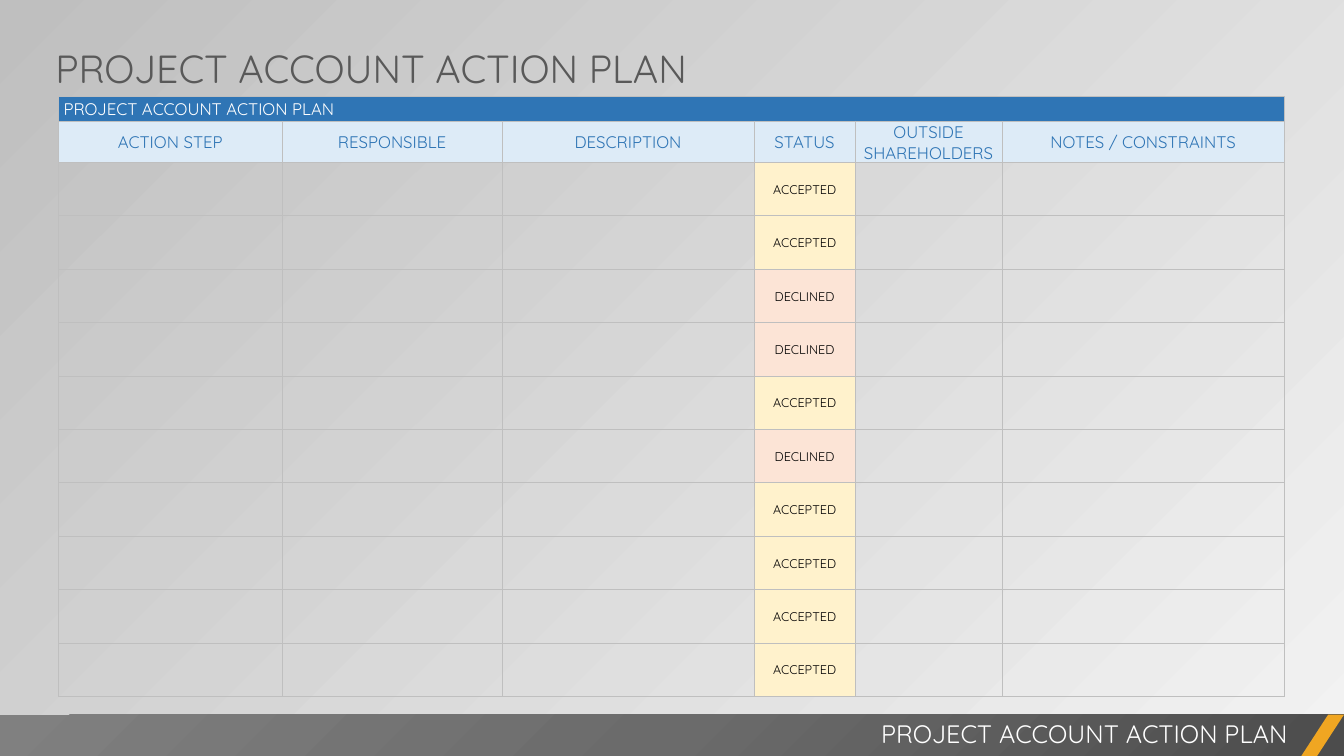
from pptx import Presentation
from pptx.dml.color import RGBColor
from pptx.enum.shapes import MSO_SHAPE
from pptx.enum.text import MSO_ANCHOR, MSO_AUTO_SIZE, PP_ALIGN
from pptx.oxml import parse_xml
from pptx.oxml.ns import nsdecls, qn
from pptx.util import Inches, Pt

RECTANGLE, PARALLELOGRAM = MSO_SHAPE.RECTANGLE, MSO_SHAPE.PARALLELOGRAM
LEFT, CENTER, RIGHT = PP_ALIGN.LEFT, PP_ALIGN.CENTER, PP_ALIGN.RIGHT
MIDDLE, FIT_SHAPE = MSO_ANCHOR.MIDDLE, MSO_AUTO_SIZE.SHAPE_TO_FIT_TEXT

WHITE = RGBColor(0xFF, 0xFF, 0xFF)
BLACK = RGBColor(0x00, 0x00, 0x00)
DARK_GRAY = RGBColor(0x59, 0x59, 0x59)
LIGHT_GRAY = RGBColor(0xF2, 0xF2, 0xF2)
GRAY = RGBColor(0xBF, 0xBF, 0xBF)
ORANGE = RGBColor(0xF0, 0xA6, 0x22)
BLUE = RGBColor(0x2F, 0x75, 0xB5)
PALE_BLUE = RGBColor(0xDD, 0xEB, 0xF7)
FOOTER_STOPS = (
    (0, RGBColor(0x4C, 0x4C, 0x4C)),
    (50, RGBColor(0x6B, 0x6B, 0x6B)),
    (100, RGBColor(0x80, 0x80, 0x80)),
)
STATUS_FILLS = {
    "ACCEPTED": RGBColor(0xFF, 0xF2, 0xCC),
    "DECLINED": RGBColor(0xFC, 0xE4, 0xD6),
}

TITLE = "PROJECT ACCOUNT ACTION PLAN"
COLUMNS = (
    ("ACTION STEP", 2.22),
    ("RESPONSIBLE", 2.18),
    ("DESCRIPTION", 2.5),
    ("STATUS", 1),
    ("OUTSIDE SHAREHOLDERS", 1.46),
    ("NOTES / CONSTRAINTS", 2.8),
)
STATUS_COLUMN = 3
STATUSES = (
    "ACCEPTED", "ACCEPTED", "DECLINED", "DECLINED", "ACCEPTED",
    "DECLINED", "ACCEPTED", "ACCEPTED", "ACCEPTED", "ACCEPTED",
)


class SlideBuilder:
    """Holds the slide style and draws each kind of element."""

    font = "Quicksand"
    border_width = Pt(0.5)

    def __init__(self, prs):
        self.s = prs.slides.add_slide(prs.slide_layouts[6])

    def background(self, start, end, angle):
        fill = self.s.background.fill
        fill.gradient()
        fill.gradient_angle = angle
        for stop, color in zip(fill.gradient_stops, (start, end)):
            stop.color.rgb = color

    def shape(self, kind, x, y, w, h, color):
        sp = self.s.shapes.add_shape(kind, Inches(x), Inches(y), Inches(w), Inches(h))
        sp.shadow.inherit = False
        sp.line.fill.background()
        sp.fill.solid()
        sp.fill.fore_color.rgb = color
        return sp

    def corner_gradient(self, sp, stops):
        gs = "".join(
            f'<a:gs pos="{pos * 1000}"><a:srgbClr val="{color}"/></a:gs>'
            for pos, color in stops
        )
        spPr = sp.element.spPr
        spPr.replace(spPr.find(qn("a:solidFill")), parse_xml(
            f'<a:gradFill {nsdecls("a")} rotWithShape="1"><a:gsLst>{gs}</a:gsLst>'
            '<a:path path="circle"><a:fillToRect l="100000" t="100000"/></a:path>'
            '</a:gradFill>'))

    def set_text(self, tf, text, size, color, align):
        p = tf.paragraphs[0]
        p.text = text
        p.alignment = align
        p.font.name = self.font
        p.font.size = Pt(size)
        p.font.color.rgb = color

    def text(self, x, y, w, h, text, size, color, align=LEFT):
        tf = self.s.shapes.add_textbox(
            Inches(x), Inches(y), Inches(w), Inches(h)).text_frame
        tf.word_wrap = True
        tf.auto_size = FIT_SHAPE
        self.set_text(tf, text, size, color, align)

    def table(self, x, y, widths, heights):
        table = self.s.shapes.add_table(
            len(heights), len(widths), Inches(x), Inches(y),
            Inches(sum(widths)), Inches(sum(heights))).table
        table.first_row = table.horz_banding = False
        for column, width in zip(table.columns, widths):
            column.width = Inches(width)
        for row, height in zip(table.rows, heights):
            row.height = Inches(height)
        for cell in table.iter_cells():
            self.border(cell)
            cell.fill.background()
        return table

    def border(self, cell):
        tcPr = cell._tc.get_or_add_tcPr()
        for side in ("lnL", "lnR", "lnT", "lnB"):
            tcPr.append(parse_xml(
                f'<a:{side} {nsdecls("a")} w="{self.border_width}"><a:solidFill>'
                f'<a:srgbClr val="{GRAY}"/></a:solidFill></a:{side}>'))

    def cell(self, cell, text, size, color, fill, align=CENTER, inset=0.01):
        cell.fill.solid()
        cell.fill.fore_color.rgb = fill
        cell.vertical_anchor = MIDDLE
        cell.margin_left = Inches(inset)
        cell.margin_top = cell.margin_right = Inches(0.01)
        cell.margin_bottom = 0
        self.set_text(cell.text_frame, text, size, color, align)


def main():
    prs = Presentation()
    prs.slide_width, prs.slide_height = Inches(13.33), Inches(7.5)
    slide = SlideBuilder(prs)
    slide.background(LIGHT_GRAY, GRAY, 135)

    footer = slide.shape(RECTANGLE, 0, 7.09, 13.33, 0.42, GRAY)
    slide.corner_gradient(footer, FOOTER_STOPS)
    accent = slide.shape(PARALLELOGRAM, 12.9, 7.09, 0.43, 0.42, ORANGE)
    accent.adjustments[0] = 0.65
    slide.text(5.25, 7.08, 7.62, 0.4, TITLE, 18, WHITE, RIGHT)
    slide.text(0.45, 0.39, 7.85, 0.57, TITLE, 28, DARK_GRAY)

    widths = [width for _, width in COLUMNS]
    table = slide.table(0.58, 0.96, widths, [0.24, 0.4] + [0.53] * len(STATUSES))
    banner = table.cell(0, 0)
    banner.merge(table.cell(0, len(COLUMNS) - 1))
    slide.cell(banner, TITLE, 12, WHITE, BLUE, LEFT, 0.05)
    for col, (heading, _) in enumerate(COLUMNS):
        slide.cell(table.cell(1, col), heading, 12, BLUE, PALE_BLUE)
    for row, status in enumerate(STATUSES, start=2):
        slide.cell(table.cell(row, STATUS_COLUMN), status, 9, BLACK, STATUS_FILLS[status])

    prs.save("out.pptx")


if __name__ == "__main__":
    main()
